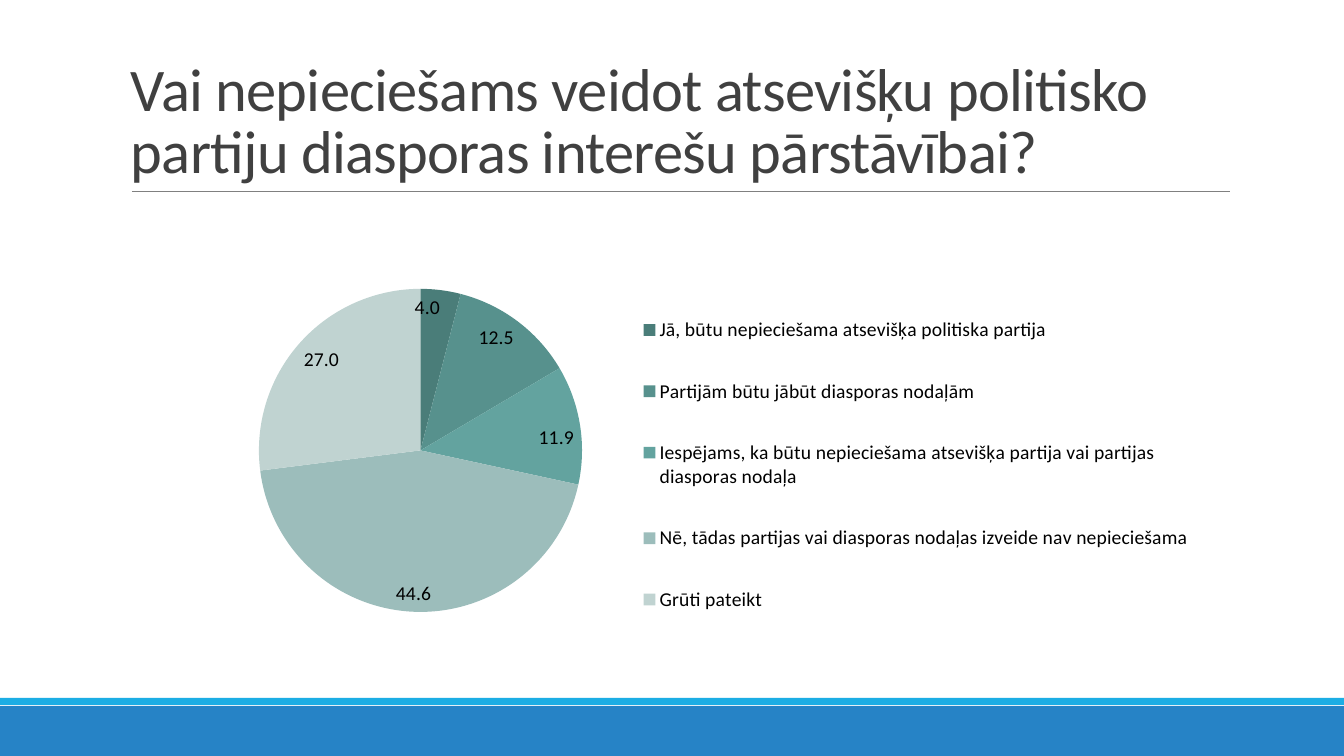
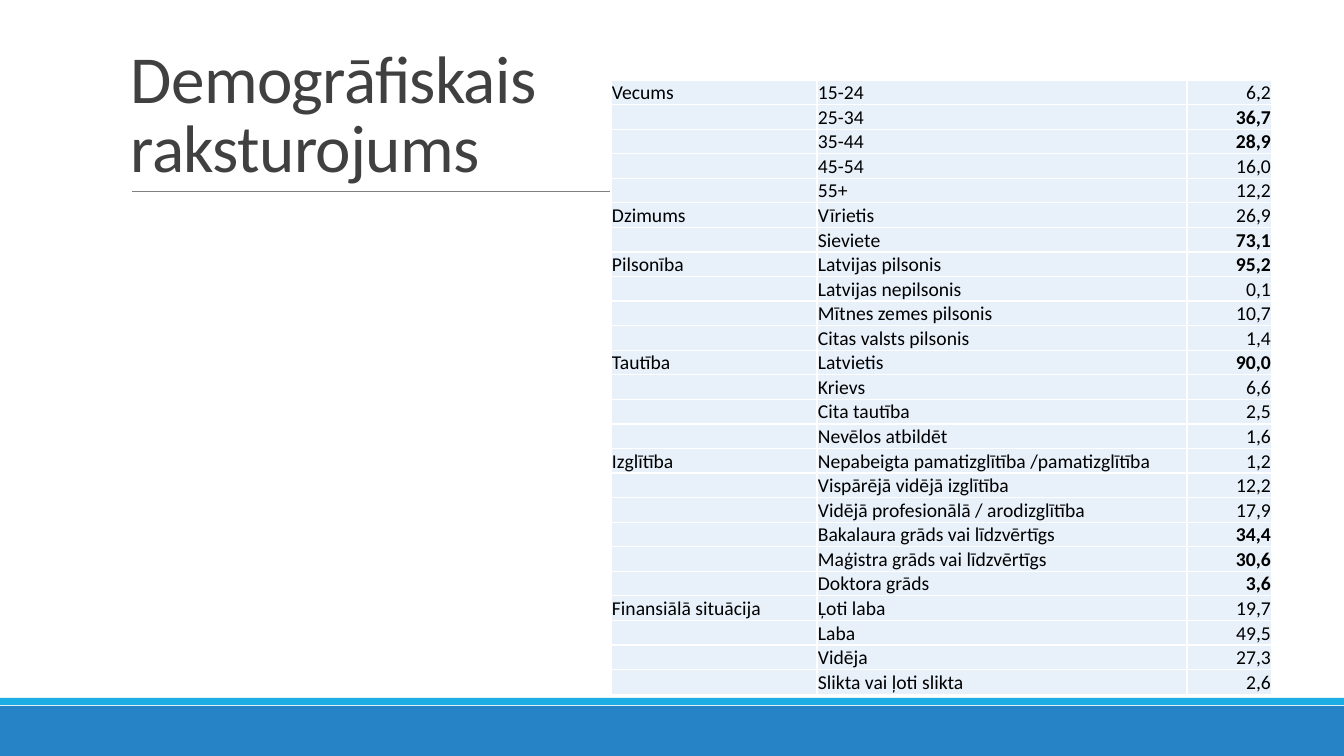
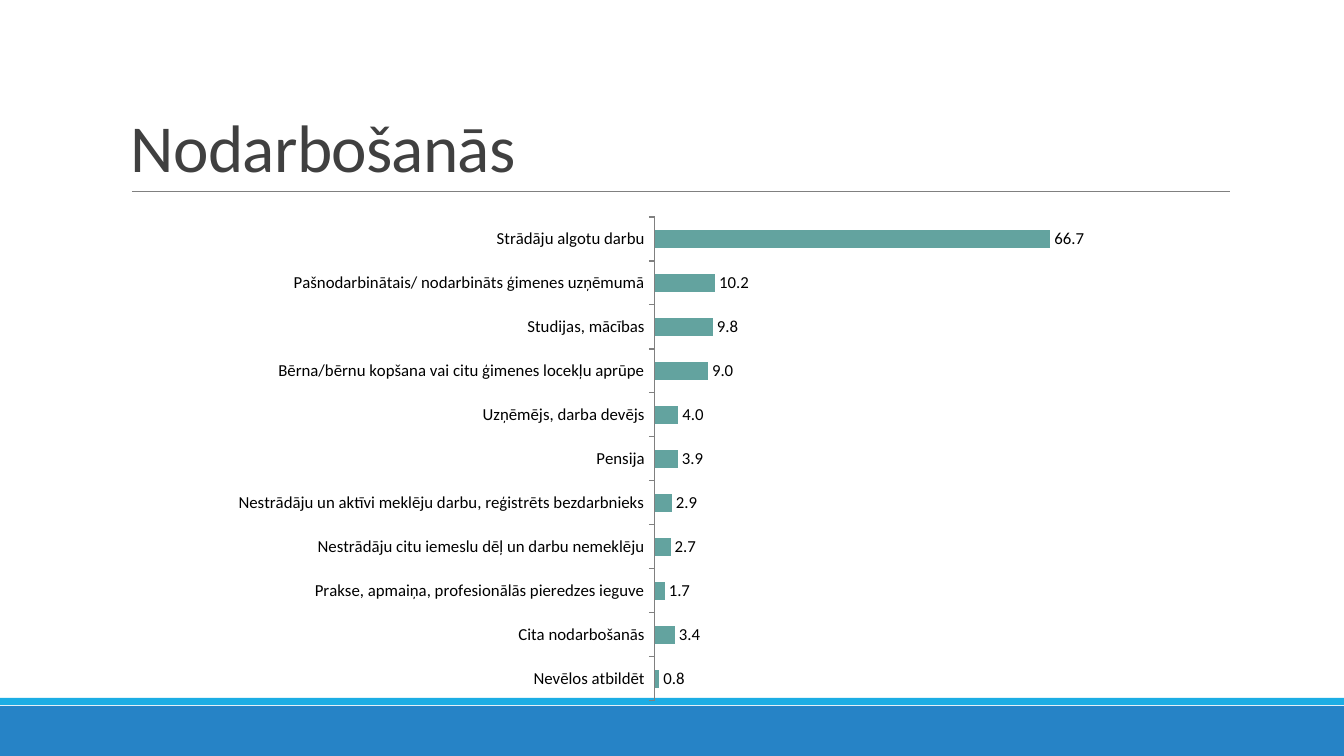
from dataclasses import dataclass

from lxml.etree import SubElement
from pptx import Presentation
from pptx.chart.data import CategoryChartData as ChartData
from pptx.dml.color import RGBColor as Rgb
from pptx.enum.chart import XL_CHART_TYPE as ChartType
from pptx.enum.chart import XL_LABEL_POSITION as LabelPos
from pptx.enum.chart import XL_LEGEND_POSITION as LegendPos
from pptx.enum.chart import XL_TICK_MARK as Tick
from pptx.enum.shapes import MSO_CONNECTOR as Connector
from pptx.enum.shapes import MSO_SHAPE as Shape
from pptx.enum.text import MSO_ANCHOR as Anchor
from pptx.enum.text import PP_ALIGN as Align
from pptx.oxml import parse_xml
from pptx.oxml.ns import nsdecls, qn
from pptx.util import Emu, Pt

SLIDE_W, SLIDE_H = 1344, 756
EMU_PER_PX = 12192000 / SLIDE_W


@dataclass(frozen=True)
class Theme:
    font: str = "Calibri"
    title: str = "404040"
    text: str = "000000"
    rule: str = "808080"
    band: str = "2683C6"
    strip: str = "1CADE4"
    cell: str = "E8F1FA"
    border: str = "FFFFFF"
    bar: str = "63A39F"
    slices: tuple = ("4A7D79", "57918D", "63A39F", "9CBDBB", "C0D3D1")
    title_size: float = 48
    long_title_size: float = 43.2
    body_size: float = 14
    axis_size: float = 12


THEME = Theme()

OPINIONS = [
    ("Jā, būtu nepieciešama atsevišķa politiska partija", 4.0),
    ("Partijām būtu jābūt diasporas nodaļām", 12.5),
    ("Iespējams, ka būtu nepieciešama atsevišķa partija vai partijas diasporas nodaļa", 11.9),
    ("Nē, tādas partijas vai diasporas nodaļas izveide nav nepieciešama", 44.6),
    ("Grūti pateikt", 27.0),
]

DEMOGRAPHICS = {
    "Vecums": [("15-24", "6,2"), ("25-34", "36,7"), ("35-44", "28,9"),
               ("45-54", "16,0"), ("55+", "12,2")],
    "Dzimums": [("Vīrietis", "26,9"), ("Sieviete", "73,1")],
    "Pilsonība": [("Latvijas pilsonis", "95,2"), ("Latvijas nepilsonis", "0,1"),
                  ("Mītnes zemes pilsonis", "10,7"), ("Citas valsts pilsonis", "1,4")],
    "Tautība": [("Latvietis", "90,0"), ("Krievs", "6,6"), ("Cita tautība", "2,5"),
                ("Nevēlos atbildēt", "1,6")],
    "Izglītība": [("Nepabeigta pamatizglītība /pamatizglītība", "1,2"),
                  ("Vispārējā vidējā izglītība", "12,2"),
                  ("Vidējā profesionālā / arodizglītība", "17,9"),
                  ("Bakalaura grāds vai līdzvērtīgs", "34,4"),
                  ("Maģistra grāds vai līdzvērtīgs", "30,6"),
                  ("Doktora grāds", "3,6")],
    "Finansiālā situācija": [("Ļoti laba", "19,7"), ("Laba", "49,5"), ("Vidēja", "27,3"),
                             ("Slikta vai ļoti slikta", "2,6")],
}
HIGHLIGHTS = {"25-34", "35-44", "Sieviete", "Latvijas pilsonis", "Latvietis",
              "Bakalaura grāds vai līdzvērtīgs", "Maģistra grāds vai līdzvērtīgs",
              "Doktora grāds"}

OCCUPATIONS = [
    ("Nevēlos atbildēt", 0.8),
    ("Cita nodarbošanās", 3.4),
    ("Prakse, apmaiņa, profesionālās pieredzes ieguve", 1.7),
    ("Nestrādāju citu iemeslu dēļ un darbu nemeklēju", 2.7),
    ("Nestrādāju un aktīvi meklēju darbu, reģistrēts bezdarbnieks", 2.9),
    ("Pensija", 3.9),
    ("Uzņēmējs, darba devējs", 4.0),
    ("Bērna/bērnu kopšana vai citu ģimenes locekļu aprūpe", 9.0),
    ("Studijas, mācības", 9.8),
    ("Pašnodarbinātais/ nodarbināts ģimenes uzņēmumā", 10.2),
    ("Strādāju algotu darbu", 66.7),
]


def px(length):
    return Emu(round(length * EMU_PER_PX))


def place(*lengths):
    return [px(length) for length in lengths]


def apply(target, **values):
    for name, value in values.items():
        setattr(target, name, value)


def style_font(font, size, color=THEME.text, bold=False):
    apply(font, name=THEME.font, size=Pt(size), bold=bold)
    font.color.rgb = Rgb.from_string(color)


def paint(fill, color):
    fill.solid()
    fill.fore_color.rgb = Rgb.from_string(color)


# Shared frame: bands, rule and title

def add_band(slide, box, color):
    band = slide.shapes.add_shape(Shape.RECTANGLE, *place(*box))
    band.shadow.inherit = False
    paint(band.fill, color)
    band.line.fill.background()


def add_title(slide, box, text, size):
    frame = slide.shapes.add_textbox(*place(*box)).text_frame
    apply(frame, word_wrap=True, vertical_anchor=Anchor.BOTTOM)
    paragraph = frame.paragraphs[0]
    paragraph.line_spacing = 0.85
    run = paragraph.add_run()
    run.text = text
    style_font(run.font, size, THEME.title)
    run.font._element.set("spc", "-50")


def add_framed_slide(deck, title, size=THEME.title_size, title_width=1109):
    slide = deck.slides.add_slide(deck.slide_layouts[6])
    add_band(slide, (0, 706, SLIDE_W, 50), THEME.band)
    add_band(slide, (0, 698, SLIDE_W, 7), THEME.strip)
    rule = slide.shapes.add_connector(Connector.STRAIGHT, *place(132, 191, 1230, 191))
    rule.line.width = Pt(0.5)
    rule.line.color.rgb = Rgb.from_string(THEME.rule)
    SubElement(rule._element.spPr, qn("a:effectLst"))
    add_title(slide, (121, 31, title_width, 160), title, size)
    return slide


# Charts

def add_survey_chart(slide, box, kind, answers, label_size, label_position):
    data = ChartData(number_format="0.0")
    data.categories = [answer for answer, _ in answers]
    data.add_series("Series 1", [share for _, share in answers])
    chart = slide.shapes.add_chart(kind, *place(*box), data).chart
    apply(chart, has_title=False, has_legend=False)
    style_font(chart.font, 10)
    plot = chart.plots[0]
    plot.has_data_labels = True
    labels = plot.data_labels
    apply(labels, show_value=True, show_percentage=False, number_format="0.0",
          number_format_is_linked=False, position=label_position)
    style_font(labels.font, label_size)
    return chart, plot


def set_layout(parent, index, x, y, w, h, inner=False):
    for old in parent.findall(qn("c:layout")):
        parent.remove(old)
    target = '<c:layoutTarget val="inner"/>' if inner else ""
    sizes = "".join(f'<c:{tag} val="{value}"/>'
                    for tag, value in zip("xywh", (x, y, w, h)))
    parent.insert(index, parse_xml(
        f'<c:layout {nsdecls("c")}><c:manualLayout>{target}<c:xMode val="edge"/>'
        f'<c:yMode val="edge"/>{sizes}</c:manualLayout></c:layout>'))


def add_opinion_pie(slide, box):
    chart, pie = add_survey_chart(slide, box, ChartType.PIE, OPINIONS,
                                  THEME.body_size, LabelPos.INSIDE_END)
    pie.vary_by_categories = True
    for index, color in enumerate(THEME.slices):
        paint(pie.series[0].points[index].format.fill, color)
    chart.has_legend = True
    apply(chart.legend, position=LegendPos.RIGHT, include_in_layout=False)
    style_font(chart.legend.font, THEME.body_size)
    root = chart._chartSpace.chart
    set_layout(root.plotArea, 0, 0.09, 0.1, 0.37, 0.79, inner=True)
    set_layout(root.find(qn("c:legend")), 1, 0.47, 0.08, 0.52, 0.9)


def add_occupation_bars(slide, box):
    chart, bars = add_survey_chart(slide, box, ChartType.BAR_CLUSTERED, OCCUPATIONS,
                                   THEME.axis_size, LabelPos.OUTSIDE_END)
    apply(bars, gap_width=150, vary_by_categories=False)
    paint(bars.series[0].format.fill, THEME.bar)
    apply(chart.value_axis, visible=False, has_major_gridlines=False,
          minimum_scale=0, maximum_scale=80)
    answers = chart.category_axis
    apply(answers, major_tick_mark=Tick.OUTSIDE, has_major_gridlines=False)
    style_font(answers.tick_labels.font, THEME.axis_size)
    answers.format.line.color.rgb = Rgb.from_string(THEME.rule)


# Table

def add_borders(cell):
    properties = cell._tc.get_or_add_tcPr()
    for index, side in enumerate("LRTB"):
        properties.insert(index, parse_xml(
            f'<a:ln{side} {nsdecls("a")} w="12700"><a:solidFill>'
            f'<a:srgbClr val="{THEME.border}"/></a:solidFill></a:ln{side}>'))


def fill_cell(cell, text, anchor, align, bold):
    apply(cell, margin_left=px(1), margin_right=px(1), margin_top=px(1),
          margin_bottom=0, vertical_anchor=anchor)
    paint(cell.fill, THEME.cell)
    add_borders(cell)
    paragraph = cell.text_frame.paragraphs[0]
    paragraph.alignment = align
    if text:
        run = paragraph.add_run()
        run.text = text
        style_font(run.font, THEME.body_size, bold=bold)
    else:
        # An empty cell keeps the row low only with a small text size
        SubElement(paragraph._p, qn("a:endParaRPr"), sz=str(THEME.body_size * 100))


def add_demographics_table(slide, box):
    rows = [(group if index == 0 else "", answer, share)
            for group, answers in DEMOGRAPHICS.items()
            for index, (answer, share) in enumerate(answers)]
    widths = (206, 370, 85)
    table = slide.shapes.add_table(len(rows), len(widths), *place(*box)).table
    apply(table, first_row=False, horz_banding=False)
    for column, width in zip(table.columns, widths):
        column.width = px(width)
    formats = ((Anchor.BOTTOM, Align.LEFT), (Anchor.TOP, Align.LEFT),
               (Anchor.MIDDLE, Align.RIGHT))
    for row, texts in zip(table.rows, rows):
        row.height = px(box[3] / len(rows))
        for index, (cell, text) in enumerate(zip(row.cells, texts)):
            bold = index == 2 and texts[1] in HIGHLIGHTS
            fill_cell(cell, text, *formats[index], bold)


def main():
    deck = Presentation()
    apply(deck, slide_width=px(SLIDE_W), slide_height=px(SLIDE_H))

    opinion = add_framed_slide(
        deck, "Vai nepieciešams veidot atsevišķu politisko partiju diasporas interešu pārstāvībai?",
        THEME.long_title_size)
    add_opinion_pie(opinion, (121, 248, 1089, 409))

    demographics = add_framed_slide(deck, "Demogrāfiskais raksturojums", title_width=626)
    add_demographics_table(demographics, (611, 80, 661, 606))

    occupation = add_framed_slide(deck, "Nodarbošanās")
    add_occupation_bars(occupation, (220, 207, 928, 504))

    deck.save("out.pptx")


if __name__ == "__main__":
    main()
